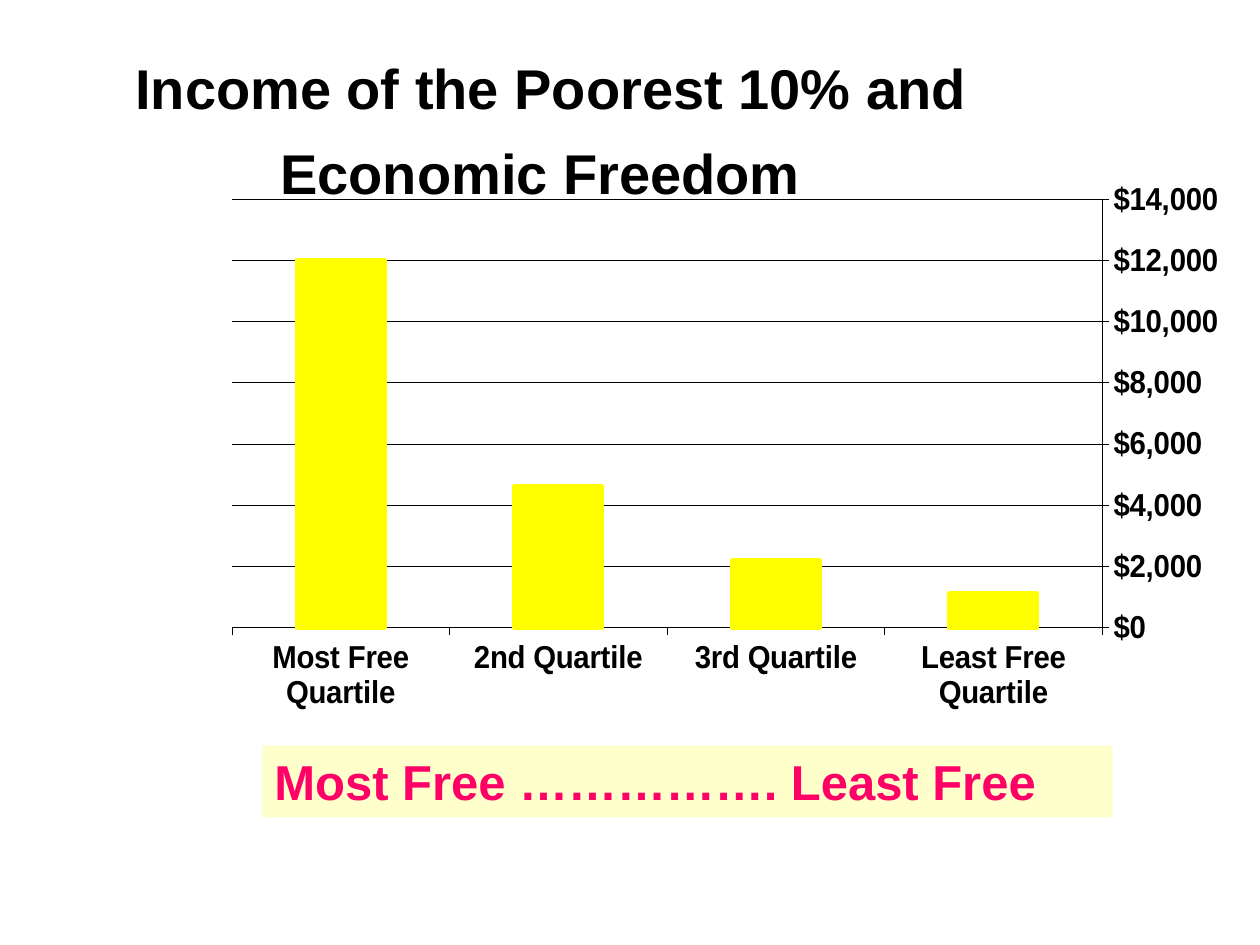
from pptx import Presentation
from pptx.chart.data import CategoryChartData
from pptx.dml.color import RGBColor
from pptx.enum.chart import XL_CHART_TYPE, XL_TICK_LABEL_POSITION, XL_TICK_MARK
from pptx.enum.shapes import MSO_SHAPE
from pptx.enum.text import MSO_ANCHOR, PP_ALIGN
from pptx.oxml import parse_xml
from pptx.oxml.ns import nsdecls
from pptx.util import Inches, Pt

COLUMNS = XL_CHART_TYPE.COLUMN_CLUSTERED
LOW = XL_TICK_LABEL_POSITION.LOW
OUTSIDE, NO_TICK = XL_TICK_MARK.OUTSIDE, XL_TICK_MARK.NONE
RECTANGLE = MSO_SHAPE.RECTANGLE
MIDDLE, TOP = MSO_ANCHOR.MIDDLE, MSO_ANCHOR.TOP
CENTER, LEFT = PP_ALIGN.CENTER, PP_ALIGN.LEFT

COLORS = {"ink": "000000", "bar": "FFFF00", "band": "FFFFCC", "accent": "FF0066"}
FONT = "Arial"
WIDTH, HEIGHT = Inches(10), Inches(7.5)
INCOMES = {
    "Least Free Quartile": 1100,
    "3rd Quartile": 2200,
    "2nd Quartile": 4600,
    "Most Free Quartile": 12000,
}


def color(name):
    return RGBColor.from_string(COLORS[name])


def set_font(font, size, name="ink", bold=True):
    font.name, font.size, font.bold = FONT, Pt(size), bold
    font.color.rgb = color(name)


def set_line(line, name, width):
    line.color.rgb = color(name)
    line.width = Pt(width)


def write(frame, text, size, name="ink", align=LEFT, anchor=TOP, spacing=None):
    frame.word_wrap = True
    frame.vertical_anchor = anchor
    para = frame.paragraphs[0]
    para.alignment = align
    if spacing:
        para.line_spacing = spacing
    span = para.add_run()
    span.text = text
    set_font(span.font, size, name)
    return para


class SlideBuilder:
    """Places elements on one slide; areas are shares of its width and height."""

    def __init__(self, deck):
        self.slide = deck.slides.add_slide(deck.slide_layouts[6])

    def place(self, left, top, width, height):
        return (round(left * WIDTH), round(top * HEIGHT),
                round(width * WIDTH), round(height * HEIGHT))

    def title(self, area, text, **style):
        box = self.slide.shapes.add_textbox(*self.place(*area))
        para = write(box.text_frame, text, align=CENTER, anchor=MIDDLE, **style)
        tail = para.add_run()
        tail.text = " "
        set_font(tail.font, 44, bold=False)

    def band(self, area, text, fill, **style):
        box = self.slide.shapes.add_shape(RECTANGLE, *self.place(*area))
        box.shadow.inherit = False
        box.fill.solid()
        box.fill.fore_color.rgb = color(fill)
        box.line.fill.background()
        write(box.text_frame, text, **style)

    def column_chart(self, area, values, plot):
        data = CategoryChartData()
        data.categories = list(values)
        data.add_series("Series 1", list(values.values()))
        chart = self.slide.shapes.add_chart(COLUMNS, *self.place(*area), data).chart
        chart.has_legend = chart.has_title = False
        set_font(chart.font, 18.3)

        columns = chart.plots[0]
        columns.gap_width = 150
        columns.vary_by_categories = False
        bars = columns.series[0].format
        bars.fill.solid()
        bars.fill.fore_color.rgb = color("bar")
        set_line(bars.line, "bar", 3.05)

        for axis in (chart.category_axis, chart.value_axis):
            axis.major_tick_mark, axis.minor_tick_mark = OUTSIDE, NO_TICK
            set_font(axis.tick_labels.font, 18.3)
            set_line(axis.format.line, "ink", 0.25)
        chart.category_axis.reverse_order = True
        chart.category_axis.tick_label_position = LOW
        scale = chart.value_axis
        scale.minimum_scale, scale.maximum_scale, scale.major_unit = 0, 14000, 2000
        scale.tick_labels.number_format = r"\$#,##0"
        scale.tick_labels.number_format_is_linked = False
        set_line(scale.major_gridlines.format.line, "ink", 0.25)
        self.fix_plot(chart, plot)

    def fix_plot(self, chart, plot):
        """Pin the inner plot area to shares of the chart's size."""
        parts = '<c:layoutTarget val="inner"/><c:xMode val="edge"/><c:yMode val="edge"/>'
        parts += "".join(f'<c:{key} val="{share}"/>' for key, share in zip("xywh", plot))
        layout = parse_xml(f'<c:layout {nsdecls("c")}><c:manualLayout>{parts}'
                           "</c:manualLayout></c:layout>")
        area = chart.plots[0]._element.getparent()
        for old in area.findall(layout.tag):
            area.remove(old)
        area.insert(0, layout)


def main():
    deck = Presentation()
    deck.slide_width, deck.slide_height = WIDTH, HEIGHT
    page = SlideBuilder(deck)
    page.title((0, 0, 0.875, 0.256), "Income of the Poorest 10% and Economic Freedom",
               size=32, spacing=Pt(51))
    page.column_chart((-0.025, 0.192, 0.992, 0.596), INCOMES,
                      plot=(0.23, 0.02, 0.76, 0.77))
    page.band((0.208, 0.789, 0.675, 0.076), "Most Free ……………. Least Free", "band",
              size=28, name="accent")
    deck.save("out.pptx")


if __name__ == "__main__":
    main()
